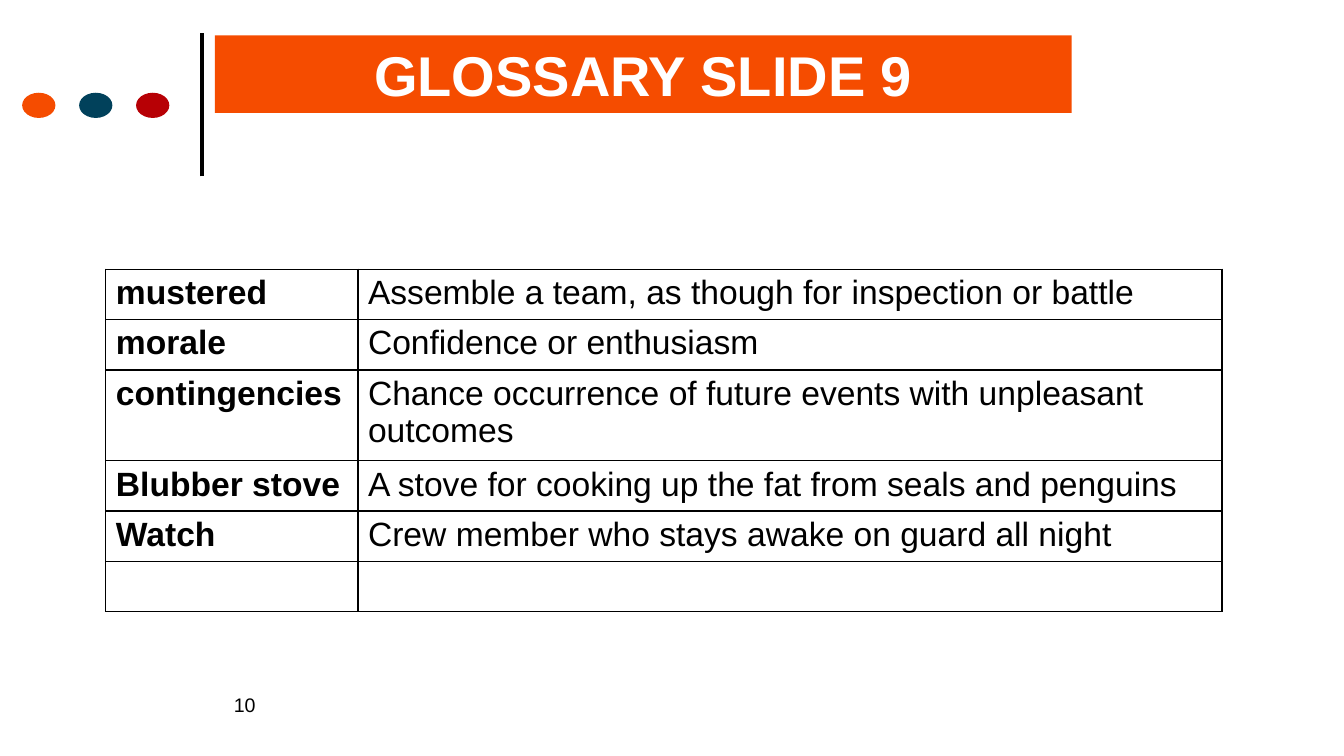
from lxml import etree
from pptx import Presentation
from pptx.dml.color import RGBColor
from pptx.enum import shapes, text
from pptx.oxml.ns import qn
from pptx.util import Inches, Pt

ORANGE = RGBColor(0xF5, 0x4C, 0x00)
BLUE = RGBColor(0x01, 0x41, 0x5B)
RED = RGBColor(0xB7, 0x00, 0x05)
BLACK = RGBColor(0, 0, 0)
WHITE = RGBColor(0xFF, 0xFF, 0xFF)

GLOSSARY = [
    ("mustered", "Assemble a team, as though for inspection or battle"),
    ("morale", "Confidence or enthusiasm"),
    ("contingencies", "Chance occurrence of future events with unpleasant outcomes"),
    ("Blubber stove", "A stove for cooking up the fat from seals and penguins"),
    ("Watch", "Crew member who stays awake on guard all night"),
    ("", ""),
]
ROW_HEIGHTS = [0.5, 0.5, 0.9, 0.5, 0.5, 0.5]


def set_font(para, size, color, bold=False):
    para.font.name = "Arial"
    para.font.size = Pt(size)
    para.font.bold = bold
    para.font.color.rgb = color


def add_borders(cell):
    properties = cell._tc.get_or_add_tcPr()
    for side in ("lnL", "lnR", "lnT", "lnB"):
        line = etree.SubElement(properties, qn(f"a:{side}"), w=str(Pt(1)))
        fill = etree.SubElement(line, qn("a:solidFill"))
        etree.SubElement(fill, qn("a:srgbClr"), val=str(BLACK))


deck = Presentation()
deck.slide_width = Inches(13.33)
deck.slide_height = Inches(7.5)
page = deck.slides.add_slide(deck.slide_layouts[5])

# Vertical rule beside the title
rule = page.shapes.add_connector(
    shapes.MSO_CONNECTOR.STRAIGHT, Inches(2), Inches(1.75), Inches(2), Inches(0.33))
rule.line.color.rgb = BLACK
rule.line.width = Pt(3)
etree.SubElement(rule._element.spPr, qn("a:effectLst"))

# Three dots
for index, color in enumerate((ORANGE, BLUE, RED)):
    dot = page.shapes.add_shape(
        shapes.MSO_SHAPE.OVAL, Inches(0.22 + 0.565 * index), Inches(0.92),
        Inches(0.33), Inches(0.25))
    dot.shadow.inherit = False
    dot.fill.solid()
    dot.fill.fore_color.rgb = color
    dot.line.fill.background()

# Title band
title = page.shapes.title
title.left, title.top = Inches(2.13), Inches(0.35)
title.width, title.height = Inches(8.5), Inches(0.77)
title.fill.solid()
title.fill.fore_color.rgb = ORANGE
title.text_frame.text = "GLOSSARY SLIDE 9"
title.text_frame.vertical_anchor = text.MSO_ANCHOR.MIDDLE
heading = title.text_frame.paragraphs[0]
heading.alignment = text.PP_ALIGN.CENTER
set_font(heading, 40, WHITE, bold=True)

# Glossary table
table = page.shapes.add_table(
    len(GLOSSARY), 2, Inches(1.05), Inches(2.67), Inches(11.07), Inches(3.4)).table
table.first_row = False
table.horz_banding = False
table.columns[0].width = Inches(2.5)
table.columns[1].width = Inches(8.57)
for row, (entry, height) in enumerate(zip(GLOSSARY, ROW_HEIGHTS)):
    table.rows[row].height = Inches(height)
    for column, wording in enumerate(entry):
        cell = table.cell(row, column)
        cell.text = wording
        set_font(cell.text_frame.paragraphs[0], 24, BLACK, bold=column == 0)
        add_borders(cell)
        cell.fill.background()

# Page number
number = page.shapes.add_textbox(Inches(2.22), Inches(6.83), Inches(1.89), Inches(0.5))
number.text_frame.word_wrap = True
number.text_frame.text = "10"
set_font(number.text_frame.paragraphs[0], 14, BLACK)

deck.save("out.pptx")
